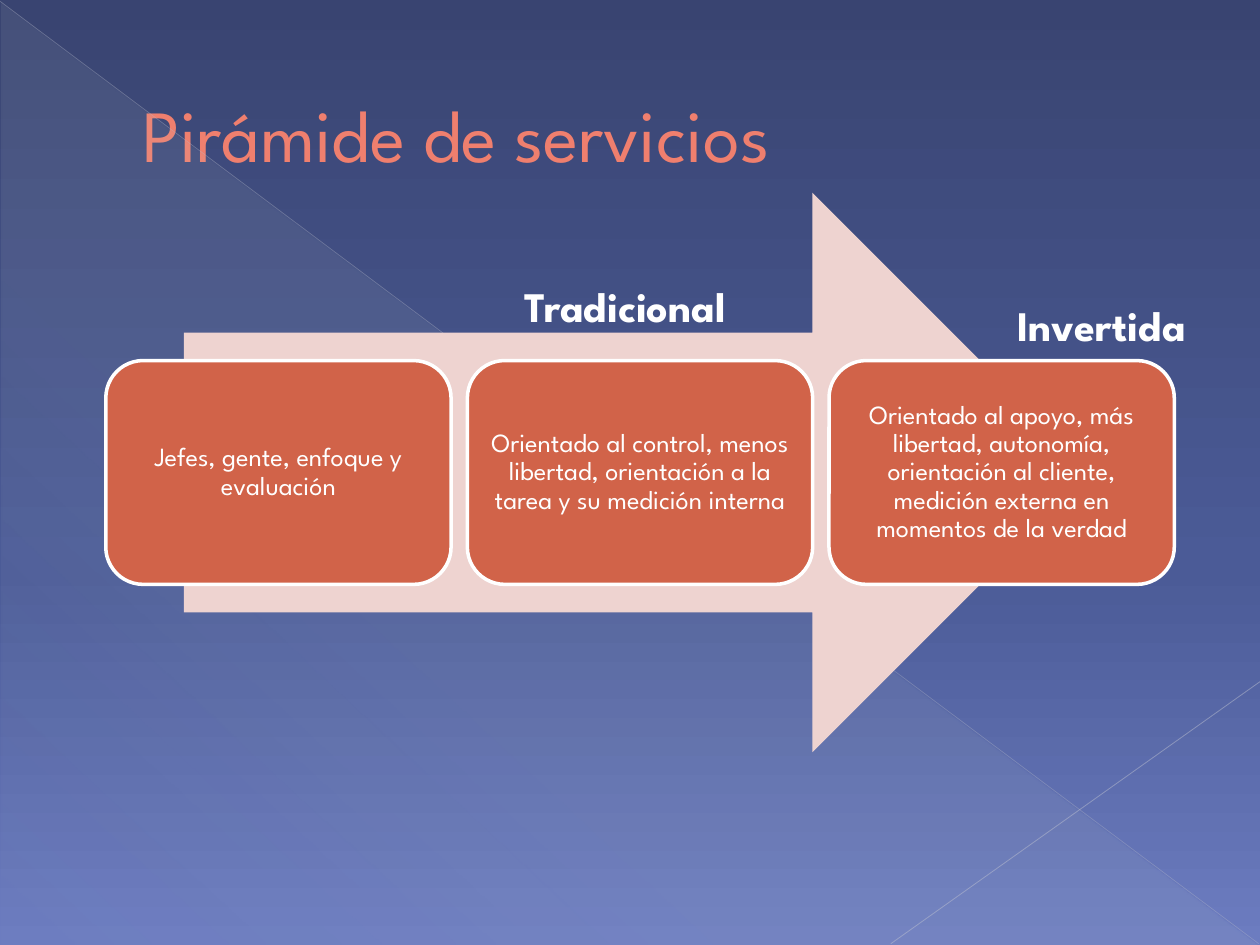
from lxml.etree import SubElement
from pptx import Presentation
from pptx.dml.color import RGBColor
from pptx.enum.shapes import MSO_CONNECTOR, MSO_SHAPE
from pptx.enum.text import MSO_ANCHOR, PP_ALIGN
from pptx.oxml.ns import qn
from pptx.util import Inches, Pt

FONT = "League Spartan"
WHITE = RGBColor(0xFF, 0xFF, 0xFF)
CORAL = RGBColor(0xEF, 0x7F, 0x6E)
BRICK = RGBColor(0xD1, 0x63, 0x49)
PINK = RGBColor(0xEE, 0xD3, 0xD0)
MIST = RGBColor(0xC5, 0xD1, 0xD7)
GREY = RGBColor(0xBA, 0xBE, 0xCD)
SILVER = RGBColor(0xC2, 0xC5, 0xD2)
SKY = [
    (0, RGBColor(0x39, 0x44, 0x71), 100),
    (60, RGBColor(0x4B, 0x5B, 0x97), 100),
    (100, RGBColor(0x6C, 0x7C, 0xC0), 100),
]
VEIL = [(0, MIST, 10), (70, MIST, 8), (100, MIST, 1)]

STEPS = [
    "Jefes, gente, enfoque y evaluación",
    "Orientado al control, menos libertad, orientación a la tarea y su medición interna",
    "Orientado al apoyo, más libertad, autonomía, orientación al cliente, "
    "medición externa en momentos de la verdad",
]


def set_alpha(color, percent):
    """Give a colour element its opacity in percent."""
    SubElement(color, qn("a:alpha")).set("val", str(percent * 1000))


def set_gradient(fill, element, stops, angle):
    """Fill with a linear gradient of (position, colour, opacity) stops."""
    fill.gradient()
    grad = element.find(".//" + qn("a:gradFill"))
    stop_list = grad.find(qn("a:gsLst"))
    for old in list(stop_list):
        stop_list.remove(old)
    for pos, rgb, opacity in stops:
        gs = SubElement(stop_list, qn("a:gs"), pos=str(pos * 1000))
        color = SubElement(gs, qn("a:srgbClr"), val=str(rgb))
        if opacity < 100:
            set_alpha(color, opacity)
    grad.find(qn("a:lin")).set("ang", str(angle * 60000))


def format_text(p, size, color, bold=False):
    """Format every run of a paragraph."""
    for r in p.runs:
        r.font.name = FONT
        r.font.size = Pt(size)
        r.font.bold = bold
        r.font.color.rgb = color


def add_flat_shape(s, kind, left, top, width, height):
    """Add a preset shape with neither shadow nor outline."""
    sp = s.shapes.add_shape(
        kind, Inches(left), Inches(top), Inches(width), Inches(height))
    sp.shadow.inherit = False
    sp.line.fill.background()
    return sp


def add_thin_line(s, start, end, color, width, opacity):
    """Add a translucent straight line between two points."""
    line = s.shapes.add_connector(
        MSO_CONNECTOR.STRAIGHT, *map(Inches, start + end))
    line.line.color.rgb = color
    line.line.width = Pt(width)
    set_alpha(line.element.find(".//" + qn("a:srgbClr")), opacity)
    SubElement(line.element.spPr, qn("a:effectLst"))


def add_backdrop(s, width, height):
    """Draw the sky gradient, the veil triangle and the two thin lines."""
    set_gradient(s.background.fill, s.element, SKY, 90)
    veil = add_flat_shape(s, MSO_SHAPE.RIGHT_TRIANGLE,
                          0.01, 0.02, width - 0.02, height - 0.02)
    set_gradient(veil.fill, veil.element, VEIL, 133)
    add_thin_line(s, (0, 0.01), (width - 0.01, height - 0.01), GREY, 0.39, 35)
    add_thin_line(s, (width, 5.41), (7.07, height - 0.01), SILVER, 0.47, 45)


def add_title(s, text, left, top, width, height):
    """Place the title placeholder and set its text."""
    title = s.shapes.title
    title.left, title.top = Inches(left), Inches(top)
    title.width, title.height = Inches(width), Inches(height)
    tf = title.text_frame
    tf.text = text
    tf.vertical_anchor = MSO_ANCHOR.MIDDLE
    p = tf.paragraphs[0]
    p.alignment = PP_ALIGN.LEFT
    pPr = p._p.get_or_add_pPr()
    pPr.set("marL", str(Inches(0.53)))
    pPr.set("indent", "0")
    format_text(p, 42, CORAL)


def add_step(s, text, left, top, width, height):
    """Draw one rounded card with its centred text."""
    card = add_flat_shape(
        s, MSO_SHAPE.ROUNDED_RECTANGLE, left, top, width, height)
    card.fill.solid()
    card.fill.fore_color.rgb = BRICK
    card.line.color.rgb = WHITE
    card.line.width = Pt(2)
    tf = card.text_frame
    tf.word_wrap = True
    tf.vertical_anchor = MSO_ANCHOR.MIDDLE
    tf.margin_left = tf.margin_right = Inches(0.06)
    tf.margin_top = tf.margin_bottom = Inches(0.06)
    tf.text = text
    p = tf.paragraphs[0]
    p.alignment = PP_ALIGN.CENTER
    p.line_spacing = 0.9
    format_text(p, 15, WHITE)


def add_process(s, left, top, width, height):
    """Draw the arrow and the row of cards laid across it."""
    arrow = add_flat_shape(
        s, MSO_SHAPE.RIGHT_ARROW, left + 0.62, top, width * 0.85, height)
    arrow.fill.solid()
    arrow.fill.fore_color.rgb = PINK
    gap = 0.13
    card_width = (width - gap * (len(STEPS) - 1)) / len(STEPS)
    card_height = height * 0.4
    for i, text in enumerate(STEPS):
        add_step(s, text, left + i * (card_width + gap),
                 top + (height - card_height) / 2, card_width, card_height)


def add_heading(s, text, left, top, width, height):
    """Add a bold centred heading above a card."""
    tf = s.shapes.add_textbox(
        Inches(left), Inches(top), Inches(width), Inches(height)).text_frame
    tf.word_wrap = True
    tf.text = text
    tf.paragraphs[0].alignment = PP_ALIGN.CENTER
    format_text(tf.paragraphs[0], 24, WHITE, bold=True)


def main():
    """Build the slide and save it."""
    prs = Presentation()
    prs.slide_width, prs.slide_height = Inches(10), Inches(7.5)
    s = prs.slides.add_slide(prs.slide_layouts[5])
    add_backdrop(s, 10, 7.5)
    add_title(s, "Pirámide de servicios", 0.5, 0.29, 9, 1.53)
    add_process(s, 0.84, 1.53, 8.48, 4.44)
    add_heading(s, "Tradicional", 3.74, 2.18, 2.44, 0.91)
    add_heading(s, "Invertida", 7.76, 2.33, 1.97, 0.5)
    prs.save("out.pptx")


if __name__ == "__main__":
    main()
